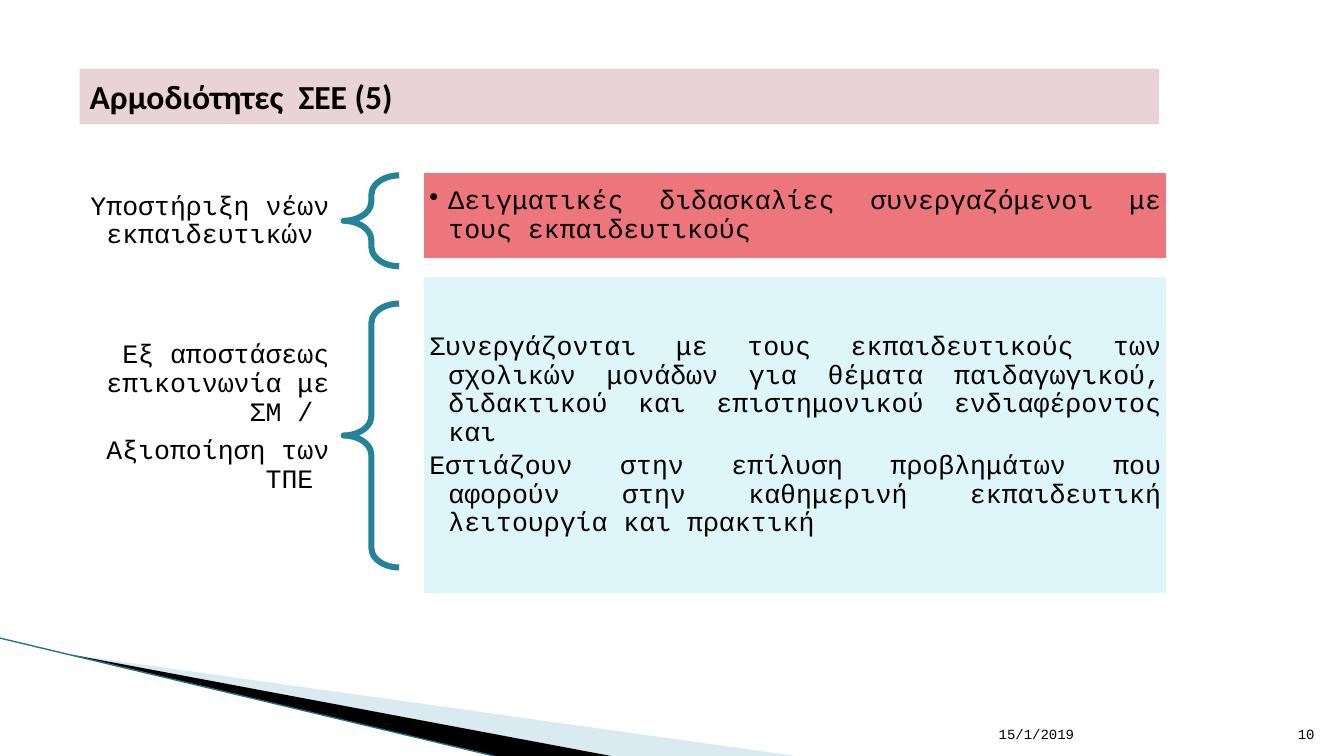
from lxml.etree import SubElement
from pptx import Presentation
from pptx.dml.color import RGBColor
from pptx.enum.shapes import MSO_CONNECTOR, MSO_SHAPE
from pptx.enum.text import MSO_ANCHOR, PP_ALIGN
from pptx.oxml.ns import qn
from pptx.util import Cm, Pt

COLORS = {
    "text": "000000", "title": "EAD3D8", "brace": "248299", "border": "FFFFFF",
    "support": "EC767C", "remote": "DEF5FA", "light wedge": "A0CBDC",
    "dark wedge": "000000", "edge": "1F7186",
}
WIDTH, HEIGHT = 33.87, 19.05
LABEL_LEFT, LABEL_WIDTH = 1.75, 6.93
BRACE_LEFT, BRACE_WIDTH = 8.66, 1.4
PANEL_LEFT, PANEL_WIDTH = 10.62, 18.85

ROWS = [
    {
        "label": ["Υποστήριξη νέων εκπαιδευτικών "],
        "details": ["Δειγματικές διδασκαλίες συνεργαζόμενοι με τους εκπαιδευτικούς"],
        "color": "support", "bullet": "•", "label_bottom": 0.13,
        "brace": (4.42, 2.29), "panel": (4.29, 2.29),
    },
    {
        "label": ["Εξ αποστάσεως επικοινωνία με ΣΜ / ", "Αξιοποίηση των ΤΠΕ "],
        "details": [
            "Συνεργάζονται με τους εκπαιδευτικούς των σχολικών μονάδων για θέματα "
            "παιδαγωγικού, διδακτικού και επιστημονικού ενδιαφέροντος και",
            "Εστιάζουν στην επίλυση προβλημάτων που αφορούν στην καθημερινή "
            "εκπαιδευτική λειτουργία και πρακτική",
        ],
        "color": "remote", "bullet": None, "label_bottom": 1.05,
        "brace": (7.65, 6.65), "panel": (6.91, 8.1),
    },
]


def rgb(name):
    """Return the named colour."""
    return RGBColor.from_string(COLORS[name])


def add_box(slide, box, fill=None):
    """Add a filled rectangle, or a text box when there is no fill."""
    lengths = [Cm(length) for length in box]
    if fill is None:
        return slide.shapes.add_textbox(*lengths)
    shape = slide.shapes.add_shape(MSO_SHAPE.RECTANGLE, *lengths)
    shape.shadow.inherit = False
    shape.fill.solid()
    shape.fill.fore_color.rgb = rgb(fill)
    shape.line.fill.background()
    return shape


def write(shape, texts, size, align=PP_ALIGN.LEFT, anchor=MSO_ANCHOR.MIDDLE,
          font="Courier New", bold=False, insets=(0.25, 0.13, 0.25, 0.13),
          line_spacing=1.0, space_after=0, hanging=0, bullet=None):
    """Fill a shape with evenly formatted paragraphs."""
    frame = shape.text_frame
    frame.word_wrap = True
    frame.vertical_anchor = anchor
    (frame.margin_left, frame.margin_top,
     frame.margin_right, frame.margin_bottom) = [Cm(inset) for inset in insets]
    for index, text in enumerate(texts):
        paragraph = frame.add_paragraph() if index else frame.paragraphs[0]
        paragraph.text = text
        paragraph.alignment = align
        paragraph.line_spacing = line_spacing
        paragraph.space_after = Pt(space_after)
        properties = paragraph._p.get_or_add_pPr()
        if hanging:
            properties.set("marL", str(Cm(hanging)))
            properties.set("indent", str(-Cm(hanging)))
        if bullet:
            SubElement(properties, qn("a:buChar")).set("char", bullet)
        paragraph.font.name = font
        paragraph.font.size = Pt(size)
        paragraph.font.bold = bold
        paragraph.font.color.rgb = rgb("text")


def add_wedge(slide, points, color, opacity=100):
    """Draw one wedge of the corner decoration."""
    corners = [(Cm(x), Cm(y)) for x, y in points]
    builder = slide.shapes.build_freeform(*corners[0])
    builder.add_line_segments(corners[1:], close=True)
    shape = builder.convert_to_shape()
    shape.shadow.inherit = False
    shape.fill.solid()
    shape.fill.fore_color.rgb = rgb(color)
    shape.line.fill.background()
    if opacity < 100:
        fill_color = shape._element.spPr.find(".//" + qn("a:srgbClr"))
        SubElement(fill_color, qn("a:alpha")).set("val", str(opacity * 1000))


def add_decoration(slide, left, top, bottom):
    """Draw the wedges and the edge line in the lower left corner."""
    tip = (left + 1.82, top + 0.42)
    add_wedge(slide, [tip, (left + 20.05, bottom), (left + 15.4, bottom)],
              "light wedge", 40)
    add_wedge(slide, [tip, (left + 15.4, bottom), (left + 12.45, bottom)],
              "dark wedge")
    edge = slide.shapes.add_connector(
        MSO_CONNECTOR.STRAIGHT, Cm(left), Cm(top), Cm(left + 12.45), Cm(bottom))
    edge.line.color.rgb = rgb("edge")
    edge.line.width = Pt(0.95)
    SubElement(edge._element.spPr, qn("a:effectLst"))


def add_title(slide, box):
    """Add the title band."""
    write(add_box(slide, box, "title"), ["Αρμοδιότητες  ΣΕΕ (5)"], 24,
          font="Calibri", bold=True)


def add_row(slide, row):
    """Add a label, its brace and the panel with the details."""
    top, height = row["brace"]
    label = add_box(slide, (LABEL_LEFT, top, LABEL_WIDTH, height))
    write(label, row["label"], 19, PP_ALIGN.RIGHT, line_spacing=0.9, space_after=6.65,
          insets=(0.38, 0.13, 0.38, row["label_bottom"]))

    brace = slide.shapes.add_shape(
        MSO_SHAPE.LEFT_BRACE, Cm(BRACE_LEFT), Cm(top), Cm(BRACE_WIDTH), Cm(height))
    brace.adjustments[0] = 0.35
    brace.shadow.inherit = False
    brace.fill.background()
    brace.line.color.rgb = rgb("brace")
    brace.line.width = Pt(4.33)

    top, height = row["panel"]
    panel = add_box(slide, (PANEL_LEFT, top, PANEL_WIDTH, height), row["color"])
    panel.line.color.rgb = rgb("border")
    panel.line.width = Pt(4.33)
    write(panel, row["details"], 19, PP_ALIGN.JUSTIFY, line_spacing=0.9,
          space_after=2.85, insets=(0.2,) * 4, hanging=0.48, bullet=row["bullet"])


def add_footer(slide, left, top, height):
    """Add the date and the slide number."""
    date_width, number_width = 7.11, 1.35
    date = add_box(slide, (left, top, date_width, height))
    write(date, ["15/1/2019"], 10, anchor=MSO_ANCHOR.BOTTOM)
    number = add_box(slide, (left + date_width, top, number_width, height))
    write(number, ["10"], 10, PP_ALIGN.RIGHT, MSO_ANCHOR.BOTTOM)


def main():
    """Build and save the presentation."""
    presentation = Presentation()
    presentation.slide_width = Cm(WIDTH)
    presentation.slide_height = Cm(HEIGHT)
    slide = presentation.slides.add_slide(presentation.slide_layouts[6])
    add_decoration(slide, 0, 16.08, HEIGHT)
    add_title(slide, (2.01, 1.73, 27.2, 1.4))
    for row in ROWS:
        add_row(slide, row)
    add_footer(slide, 24.92, 17.81, 1.02)
    presentation.save("out.pptx")


if __name__ == "__main__":
    main()
